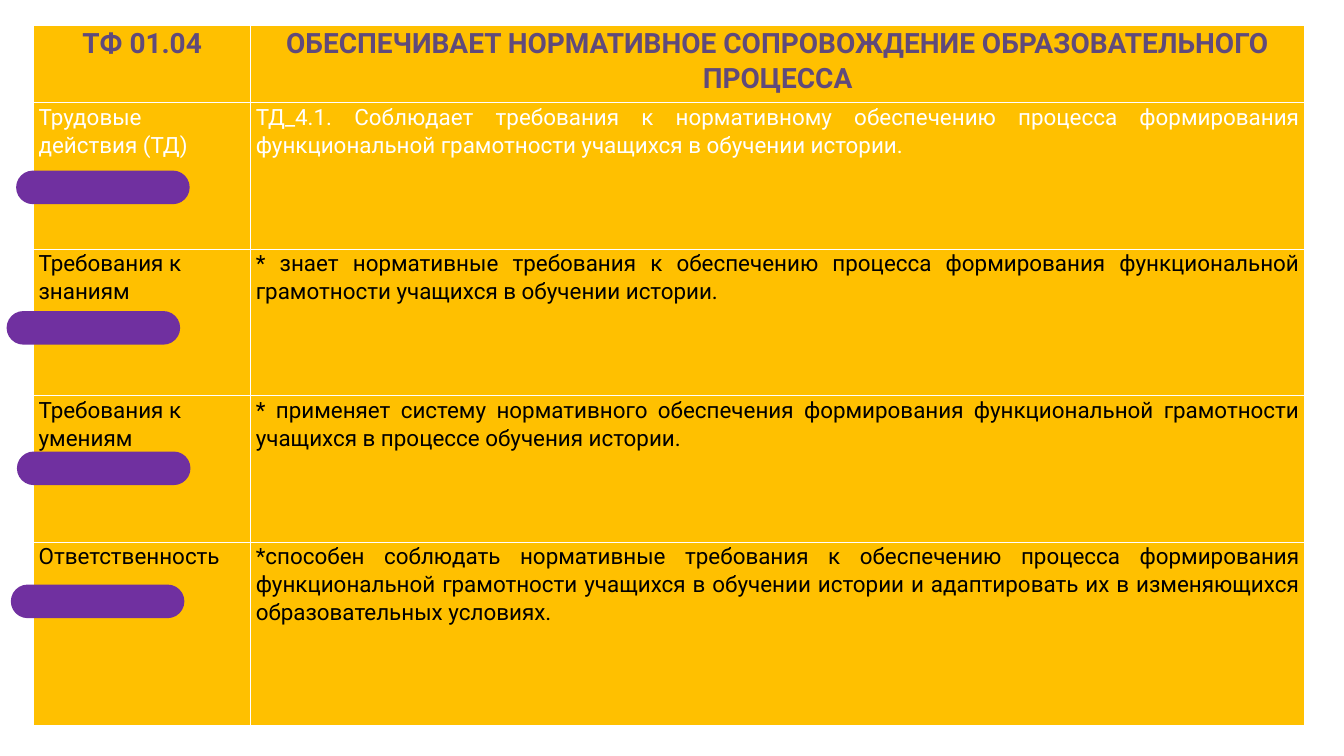
from pptx import Presentation
from pptx.dml.color import RGBColor
from pptx.enum.shapes import MSO_SHAPE
from pptx.enum.text import PP_ALIGN
from pptx.util import Cm, Pt

PILL = MSO_SHAPE.ROUNDED_RECTANGLE
LEFT, CENTER, JUSTIFY = PP_ALIGN.LEFT, PP_ALIGN.CENTER, PP_ALIGN.JUSTIFY

AMBER = RGBColor(0xFF, 0xC0, 0x00)
PURPLE = RGBColor(0x70, 0x30, 0xA0)
PLUM = RGBColor(0x60, 0x4A, 0x7B)
WHITE = RGBColor(0xFF, 0xFF, 0xFF)
BLACK = RGBColor(0x00, 0x00, 0x00)

COLUMN_WIDTHS = (8.21, 39.83)
ROW_HEIGHTS = (2.9, 5.54, 5.54, 5.54, 6.93)
ROWS = (
    ("ТФ 01.04",
     "ОБЕСПЕЧИВАЕТ НОРМАТИВНОЕ СОПРОВОЖДЕНИЕ ОБРАЗОВАТЕЛЬНОГО ПРОЦЕССА"),
    ("Трудовые действия (ТД)",
     "ТД_4.1. Соблюдает требования к нормативному обеспечению процесса "
     "формирования функциональной грамотности учащихся в обучении истории."),
    ("Требования к знаниям",
     "* знает нормативные требования к обеспечению процесса формирования "
     "функциональной грамотности учащихся в обучении истории."),
    ("Требования к умениям",
     "* применяет систему нормативного обеспечения формирования "
     "функциональной грамотности учащихся в процессе обучения истории."),
    ("Ответственность",
     "*способен соблюдать нормативные требования к обеспечению процесса "
     "формирования функциональной грамотности учащихся в обучении истории "
     "и адаптировать их в изменяющихся образовательных условиях."),
)
PILL_POSITIONS = ((0.61, 6.45), (0.25, 11.76), (0.64, 17.07), (0.41, 22.1))


class SlideBuilder:
    font = "Roboto"
    line_spacing = 1.07
    margins = {"margin_left": Cm(0.19), "margin_right": Cm(0.19),
               "margin_top": 0, "margin_bottom": 0}
    header = {"size": Pt(30), "bold": True}
    body = {"size": Pt(24), "bold": False}

    def __init__(self, slide):
        self.s = slide

    def cell(self, cell, text, align, color, formats):
        for name, value in self.margins.items():
            setattr(cell, name, value)
        cell.fill.solid()
        cell.fill.fore_color.rgb = AMBER
        p = cell.text_frame.paragraphs[0]
        p.alignment = align
        p.line_spacing = self.line_spacing
        r = p.add_run()
        r.text = text
        for name, value in {"name": self.font, **formats}.items():
            setattr(r.font, name, value)
        r.font.color.rgb = color

    def table(self, left, top, widths, heights, rows):
        table = self.s.shapes.add_table(
            len(heights), len(widths), Cm(left), Cm(top),
            Cm(sum(widths)), Cm(sum(heights))).table
        table.horz_banding = False
        for column, width in zip(table.columns, widths):
            column.width = Cm(width)
        for row, height in zip(table.rows, heights):
            row.height = Cm(height)
        colors = [PLUM, WHITE] + [BLACK] * (len(rows) - 2)
        for i, (texts, color) in enumerate(zip(rows, colors)):
            aligns = (LEFT, JUSTIFY) if i else (CENTER, CENTER)
            formats = self.body if i else self.header
            for j, (text, align) in enumerate(zip(texts, aligns)):
                self.cell(table.cell(i, j), text, align, color, formats)

    def pill(self, left, top):
        sp = self.s.shapes.add_shape(PILL, Cm(left), Cm(top), Cm(6.56), Cm(1.27))
        sp.adjustments[0] = 0.5
        sp.shadow.inherit = False
        sp.fill.solid()
        sp.fill.fore_color.rgb = PURPLE
        sp.line.fill.background()


def main():
    prs = Presentation()
    prs.slide_width, prs.slide_height = Cm(50.8), Cm(28.58)
    builder = SlideBuilder(prs.slides.add_slide(prs.slide_layouts[6]))
    builder.table(1.27, 0.97, COLUMN_WIDTHS, ROW_HEIGHTS, ROWS)
    for left, top in PILL_POSITIONS:
        builder.pill(left, top)
    prs.save("out.pptx")


if __name__ == "__main__":
    main()
